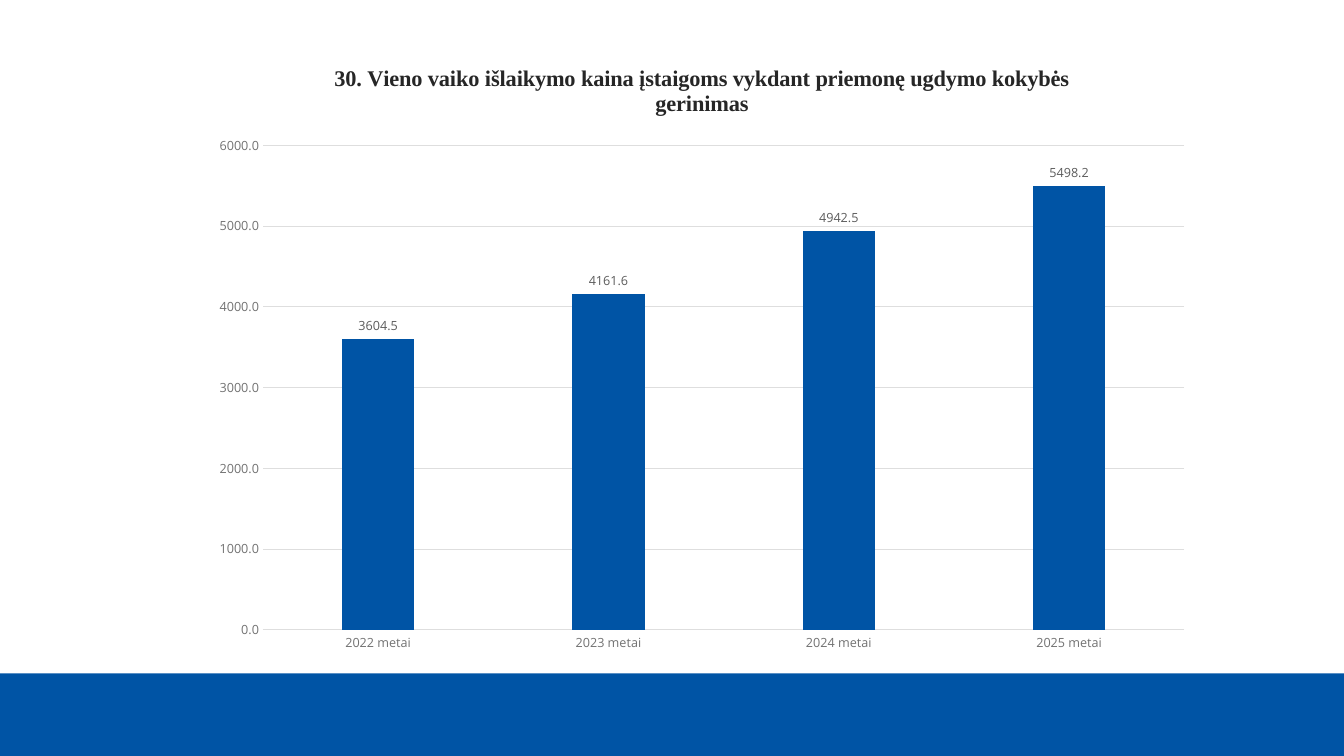
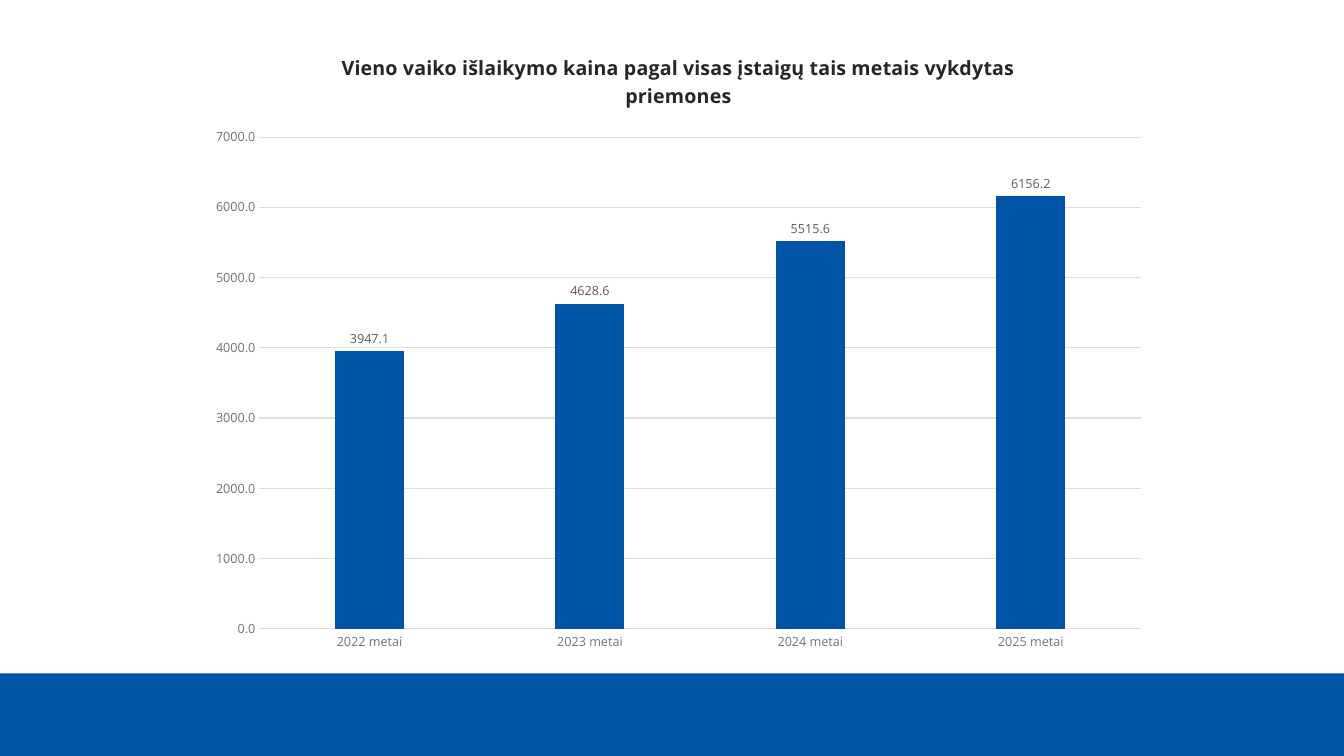
import pptx
import pptx.chart.data
import pptx.dml.color
import pptx.enum.chart
import pptx.enum.shapes
import pptx.util

Pt = pptx.util.Pt

COLORS = {
    "blue": "0054A5",
    "title": "262626",
    "axis": "727272",
    "value": "5C5C5C",
    "grid": "DEDEDE",
}
BODY_FONT = "Open Sans"
SLIDE_WIDTH, SLIDE_HEIGHT = 960, 540
BAND_HEIGHT = 59
YEARS = ["2022 metai", "2023 metai", "2024 metai", "2025 metai"]
ALL_MEASURES = "Vieno vaiko išlaikymo kaina pagal visas įstaigų tais metais vykdytas priemones"
COST_SLIDES = [
    {
        "title": "30. Vieno vaiko išlaikymo kaina įstaigoms vykdant priemonę ugdymo kokybės gerinimas",
        "title_font": "Times New Roman",
        "title_size": 16,
        "series": "Series 1",
        "costs": [3604.5, 4161.6, 4942.5, 5498.2],
        "box": (142.5, 30.25, 717.75, 444.25),
    },
    {
        "title": ALL_MEASURES,
        "title_font": BODY_FONT,
        "title_size": 14,
        "series": ALL_MEASURES,
        "costs": [3947.1, 4628.6, 5515.6, 6156.2],
        "box": (140.5, 22.25, 688.25, 451.5),
    },
]


def rgb(name):
    return pptx.dml.color.RGBColor.from_string(COLORS[name])


def style_font(font, size, color, name=BODY_FONT, bold=False):
    font.size = Pt(size)
    font.name = name
    font.bold = bold
    font.color.rgb = rgb(color)


def style_line(line, color):
    line.color.rgb = rgb(color)
    line.width = Pt(0.75)


def add_layout_band(layout, slide):
    for placeholder in list(layout.placeholders):
        layout.shapes.element.remove(placeholder.element)
    band = slide.shapes.add_shape(
        pptx.enum.shapes.MSO_SHAPE.RECTANGLE,
        Pt(0), Pt(SLIDE_HEIGHT - BAND_HEIGHT), Pt(SLIDE_WIDTH), Pt(BAND_HEIGHT),
    )
    band.shadow.inherit = False
    band.fill.solid()
    band.fill.fore_color.rgb = rgb("blue")
    band.line.fill.background()
    layout.shapes.element.append(band.element)


def style_axes(chart):
    for axis in (chart.category_axis, chart.value_axis):
        axis.major_tick_mark = pptx.enum.chart.XL_TICK_MARK.NONE
        axis.minor_tick_mark = pptx.enum.chart.XL_TICK_MARK.NONE
        style_font(axis.tick_labels.font, 9, "axis")
    style_line(chart.category_axis.format.line, "grid")
    cost_axis = chart.value_axis
    cost_axis.format.line.fill.background()
    cost_axis.has_major_gridlines = True
    style_line(cost_axis.major_gridlines.format.line, "grid")
    cost_axis.tick_labels.number_format = "0.0"
    cost_axis.tick_labels.number_format_is_linked = False


def style_columns(plot):
    plot.gap_width = 219
    plot.overlap = -27
    plot.vary_by_categories = False
    columns = plot.series[0]
    columns.invert_if_negative = False
    columns.format.fill.solid()
    columns.format.fill.fore_color.rgb = rgb("blue")
    labels = columns.data_labels
    labels.show_value = True
    labels.number_format = "0.0"
    labels.number_format_is_linked = False
    labels.position = pptx.enum.chart.XL_LABEL_POSITION.OUTSIDE_END
    style_font(labels.font, 9, "value")


def add_cost_chart(slide, content):
    data = pptx.chart.data.CategoryChartData(number_format="0.0")
    data.categories = YEARS
    data.add_series(content["series"], content["costs"])
    chart = slide.shapes.add_chart(
        pptx.enum.chart.XL_CHART_TYPE.COLUMN_CLUSTERED,
        *(Pt(length) for length in content["box"]), data,
    ).chart
    style_font(chart.font, 10, "title")
    chart.has_legend = False
    chart.has_title = True
    heading = chart.chart_title.text_frame.paragraphs[0].add_run()
    heading.text = content["title"]
    style_font(heading.font, content["title_size"], "title", content["title_font"], True)
    chart.chart_title.include_in_layout = False
    style_axes(chart)
    style_columns(chart.plots[0])


def main():
    deck = pptx.Presentation()
    deck.slide_width = Pt(SLIDE_WIDTH)
    deck.slide_height = Pt(SLIDE_HEIGHT)
    layout = deck.slide_layouts[6]
    slides = [deck.slides.add_slide(layout) for _ in COST_SLIDES]
    for slide in slides:
        for placeholder in list(slide.placeholders):
            slide.shapes.element.remove(placeholder.element)
    add_layout_band(layout, slides[0])
    for slide, content in zip(slides, COST_SLIDES):
        add_cost_chart(slide, content)
    deck.save("out.pptx")


if __name__ == "__main__":
    main()
